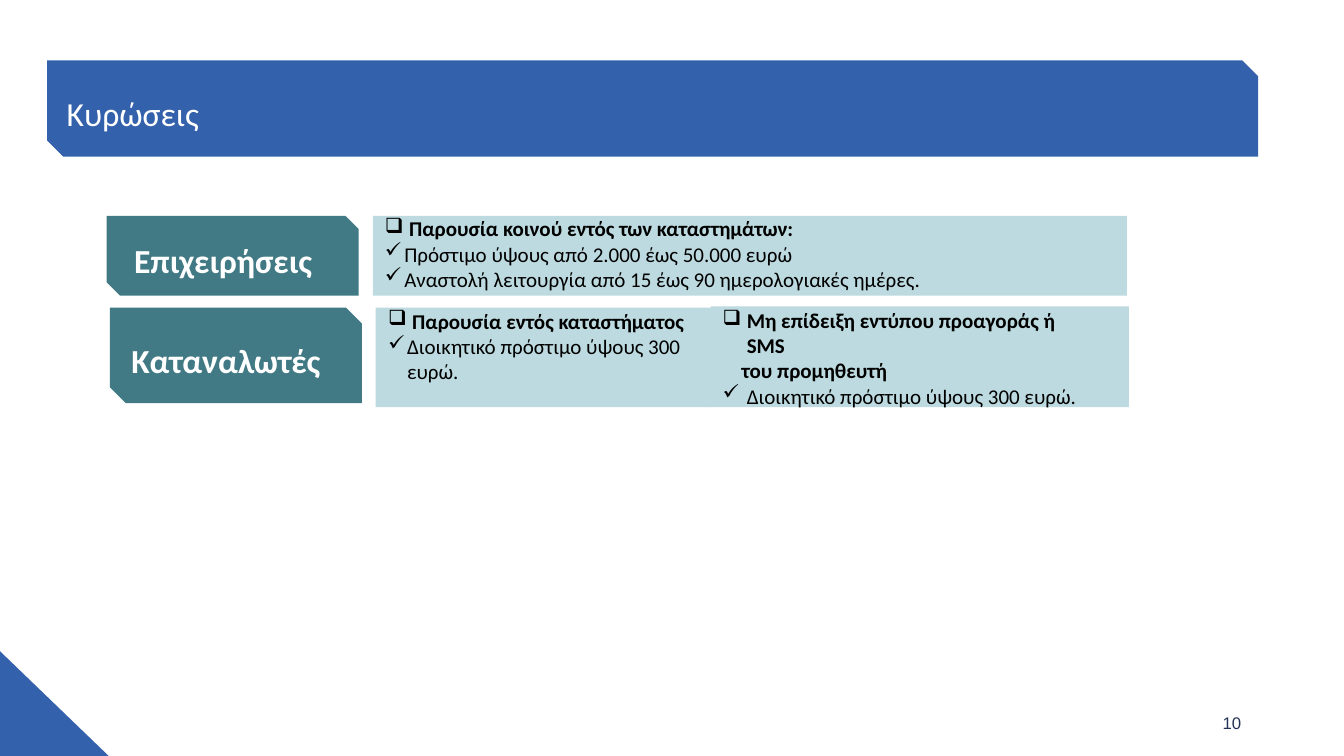
import pptx
import pptx.util
import pptx.dml.color
import pptx.enum.shapes
import pptx.enum.text
import pptx.oxml.ns
import lxml.etree

Cm = pptx.util.Cm
Pt = pptx.util.Pt
RGBColor = pptx.dml.color.RGBColor
MSO_SHAPE = pptx.enum.shapes.MSO_SHAPE

BLUE = RGBColor(0x34, 0x61, 0xAB)
TEAL = RGBColor(0x41, 0x7A, 0x85)
PALE = RGBColor(0xBC, 0xDA, 0xDF)
NAVY = RGBColor(0x24, 0x33, 0x55)
WHITE = RGBColor(0xFF, 0xFF, 0xFF)
BLACK = RGBColor(0, 0, 0)

prs = pptx.Presentation()
prs.slide_width = Cm(33.87)
prs.slide_height = Cm(19.05)
s = prs.slides.add_slide(prs.slide_layouts[6])


def add_panel(kind, box, color):
    sp = s.shapes.add_shape(kind, *[Cm(v) for v in box])
    sp.shadow.inherit = False
    sp.fill.solid()
    sp.fill.fore_color.rgb = color
    sp.line.fill.background()
    return sp


def write_text(sp, lines, size, color, font="Calibri", wrap=True):
    tf = sp.text_frame
    tf.word_wrap = wrap
    tf.margin_left = tf.margin_top = tf.margin_right = tf.margin_bottom = 0
    tf.vertical_anchor = pptx.enum.text.MSO_ANCHOR.TOP
    for i, (text, bold, bullet, left, indent) in enumerate(lines):
        p = tf.paragraphs[0] if i == 0 else tf.add_paragraph()
        p.alignment = pptx.enum.text.PP_ALIGN.LEFT
        pPr = p._p.get_or_add_pPr()
        pPr.set("marL", str(Cm(left)))
        pPr.set("indent", str(Cm(indent)))
        if bullet:
            bu = lxml.etree.SubElement(pPr, pptx.oxml.ns.qn("a:buChar"))
            bu.set("char", bullet)
        r = p.add_run()
        r.text = text
        r.font.name = font
        r.font.size = Pt(size)
        r.font.bold = bold
        r.font.color.rgb = color


add_panel(MSO_SHAPE.RIGHT_TRIANGLE, (0, 16.41, 2.74, 2.64), BLUE)

SNIPPED = MSO_SHAPE.SNIP_2_DIAG_RECTANGLE
for box, color in [
    ((1.19, 1.52, 30.52, 2.43), BLUE),
    ((2.69, 5.44, 6.35, 2.01), TEAL),
    ((2.77, 7.75, 6.35, 2.41), TEAL),
]:
    add_panel(SNIPPED, box, color)

for box, text, bold, size, color, font in [
    ((1.65, 2.34, 30.56, 0.91), "Κυρώσεις", False, 24, WHITE, "Calibri"),
    ((3.35, 6.05, 4.57, 0.91), "Επιχειρήσεις", True, 24, WHITE, "Calibri"),
    ((3.28, 8.56, 4.83, 0.91), "Καταναλωτές", True, 24, WHITE, "Calibri"),
    ((30.78, 17.96, 0.53, 0.51), "10", False, 12, NAVY, "Arial"),
]:
    sp = s.shapes.add_textbox(*[Cm(v) for v in box])
    write_text(sp, [(text, bold, None, 0.03, 0)], size, color, font, False)

business = add_panel(MSO_SHAPE.RECTANGLE, (9.4, 5.44, 19, 2.01), PALE)
write_text(business, [
    ("Παρουσία κοινού εντός των καταστημάτων:", True, "❑", 0.91, -0.61),
    ("Πρόστιμο ύψους από 2.000 έως 50.000 ευρώ", False, "✓", 0.79, -0.49),
    ("Αναστολή λειτουργία από 15 έως 90 ημερολογιακές ημέρες.",
     False, "✓", 0.79, -0.49),
], 15, BLACK)

FINE = "Διοικητικό πρόστιμο ύψους 300 ευρώ."
for panel_box, text_box, lines in [
    ((9.47, 7.75, 8.46, 2.51), (9.78, 7.77, 7.6, 1.83), [
        ("Παρουσία εντός καταστήματος", True, "❑", 0.61, -0.61),
        (FINE, False, "✓", 0.48, -0.48),
    ]),
    ((17.91, 7.72, 10.54, 2.54), (18.21, 7.75, 9.4, 1.83), [
        ("Μη επίδειξη εντύπου προαγοράς ή SMS", True, "❑", 0.61, -0.61),
        ("του προμηθευτή", True, None, 0.48, 0),
        (FINE, False, "✓", 0.61, -0.61),
    ]),
]:
    add_panel(MSO_SHAPE.RECTANGLE, panel_box, PALE)
    sp = s.shapes.add_textbox(*[Cm(v) for v in text_box])
    write_text(sp, lines, 15, BLACK)

prs.save("out.pptx")
